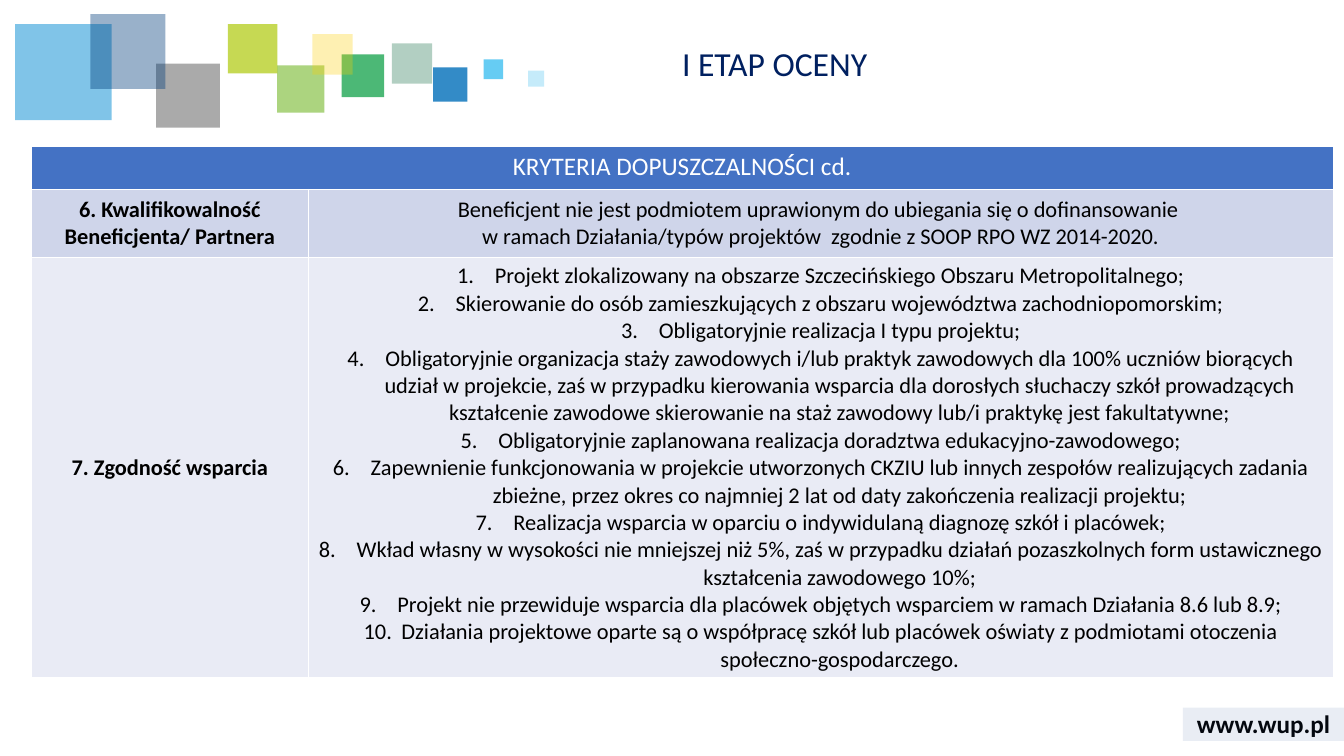
from dataclasses import dataclass

from lxml import etree
from pptx import Presentation
from pptx.dml.color import RGBColor
from pptx.enum.shapes import MSO_SHAPE
from pptx.enum.text import MSO_ANCHOR, MSO_AUTO_SIZE, PP_ALIGN
from pptx.oxml.ns import qn
from pptx.util import Pt

RECT = MSO_SHAPE.RECTANGLE
LEFT, MID = PP_ALIGN.LEFT, PP_ALIGN.CENTER
TOP, HALF = MSO_ANCHOR.TOP, MSO_ANCHOR.MIDDLE
FIXED = MSO_AUTO_SIZE.NONE
FACE = "Calibri"

HUES = {
    "sage": "006138", "blue": "006EB9", "green": "009A3C", "sky": "028BD3",
    "leaf": "75B82A", "gray": "575757", "navy": "003D7C", "cyan": "40C0F1",
    "lime": "AFCA0B", "gold": "FED000", "strip": "2F5597",
    "title": "002060", "black": "000000", "white": "FFFFFF",
    "head": "4472C4", "dark": "CFD5EA", "light": "E9EBF5",
}


@dataclass
class Box:
    hue: str
    alpha: int
    left: float
    top: float
    width: float
    height: float


@dataclass
class Entry:
    row: int
    col: int
    lines: list[str]
    fill: str
    ink: str = "black"
    size: int = 16
    bold: bool = False
    anchor: MSO_ANCHOR = HALF
    listed: bool = False


BOXES = [
    Box("sage", 30, 280, 31, 28.8, 28.8),
    Box("blue", 80, 309.5, 48.2, 24.5, 24.5),
    Box("green", 70, 244, 38.9, 30.5, 30.5),
    Box("sky", 50, 10.8, 17.3, 69, 68.5),
    Box("leaf", 60, 198, 46.8, 33.8, 33.8),
    Box("gray", 50, 111.5, 45.4, 45.6, 45.8),
    Box("navy", 40, 64.6, 10, 53.5, 53.5),
    Box("cyan", 80, 345.5, 42.4, 14, 14.2),
    Box("lime", 70, 162.8, 17.2, 35.3, 35.3),
    Box("gold", 30, 223.2, 24.5, 28.8, 28.8),
    Box("cyan", 30, 377.3, 50.4, 11.5, 11.5),
    Box("strip", 10, 845, 505.5, 115, 23.8),
]

RULES = [
    "Projekt zlokalizowany na obszarze Szczecińskiego Obszaru Metropolitalnego;",
    "Skierowanie do osób zamieszkujących z obszaru województwa zachodniopomorskim;",
    "Obligatoryjnie realizacja I typu projektu;",
    "Obligatoryjnie organizacja staży zawodowych i/lub praktyk zawodowych dla 100% "
    "uczniów biorących udział w projekcie, zaś w przypadku kierowania wsparcia dla "
    "dorosłych słuchaczy szkół prowadzących kształcenie zawodowe skierowanie na staż "
    "zawodowy lub/i praktykę jest fakultatywne;",
    "Obligatoryjnie zaplanowana realizacja doradztwa edukacyjno-zawodowego;",
    "Zapewnienie funkcjonowania w projekcie utworzonych CKZIU lub innych zespołów "
    "realizujących zadania zbieżne, przez okres co najmniej 2 lat od daty zakończenia "
    "realizacji projektu;",
    "Realizacja wsparcia w oparciu o indywidulaną diagnozę szkół i placówek;",
    "Wkład własny w wysokości nie mniejszej niż 5%, zaś w przypadku działań "
    "pozaszkolnych form ustawicznego kształcenia zawodowego 10%;",
    "Projekt nie przewiduje wsparcia dla placówek objętych wsparciem w ramach "
    "Działania 8.6 lub 8.9;",
    "Działania projektowe oparte są o współpracę szkół lub placówek oświaty z "
    "podmiotami otoczenia społeczno-gospodarczego.",
]

ENTRIES = [
    Entry(0, 0, ["KRYTERIA DOPUSZCZALNOŚCI cd."], "head", "white", 18, anchor=TOP),
    Entry(1, 0, ["6. Kwalifikowalność Beneficjenta/ Partnera"], "dark", bold=True),
    Entry(1, 1, ["Beneficjent nie jest podmiotem uprawionym do ubiegania się "
                 "o dofinansowanie \nw ramach Działania/typów projektów  zgodnie "
                 "z SOOP RPO WZ 2014-2020."], "dark"),
    Entry(2, 0, ["7. Zgodność wsparcia"], "light", bold=True),
    Entry(2, 1, RULES, "light", listed=True),
]


def tint(hue: str) -> RGBColor:
    return RGBColor.from_string(HUES[hue])


def apply(item, form: dict) -> None:
    for name, value in form.items():
        setattr(item, name, value)


def write(para, text: str, size: int, ink: str, bold: bool, align=MID) -> None:
    para.text = text
    para.alignment = align
    for run in para.runs:
        apply(run.font, {"name": FACE, "size": Pt(size), "bold": bold})
        run.font.color.rgb = tint(ink)


def draw_box(slide, box: Box) -> None:
    spot = [Pt(n) for n in (box.left, box.top, box.width, box.height)]
    shape = slide.shapes.add_shape(RECT, *spot)
    shape.shadow.inherit = False
    shape.line.fill.background()
    shape.fill.solid()
    shape.fill.fore_color.rgb = tint(box.hue)
    color = shape.fill._xPr.find(f".//{qn('a:srgbClr')}")
    etree.SubElement(color, qn("a:alpha"), val=str(box.alpha * 1000))


def edge(cell) -> None:
    props = cell._tc.get_or_add_tcPr()
    for side in ("lnL", "lnR", "lnT", "lnB"):
        line = etree.SubElement(props, qn(f"a:{side}"), w=str(Pt(1)))
        fill = etree.SubElement(line, qn("a:solidFill"))
        etree.SubElement(fill, qn("a:srgbClr"), val=HUES["white"])


def number(para) -> None:
    props = para._p.get_or_add_pPr()
    props.set("marL", str(Pt(27)))
    props.set("indent", str(-Pt(27)))
    etree.SubElement(props, qn("a:buFont"), typeface="+mj-lt")
    etree.SubElement(props, qn("a:buAutoNum"), type="arabicPeriod")


def fill_cell(cell, entry: Entry) -> None:
    cell.fill.solid()
    cell.fill.fore_color.rgb = tint(entry.fill)
    cell.vertical_anchor = entry.anchor
    frame = cell.text_frame
    for i, line in enumerate(entry.lines):
        para = frame.add_paragraph() if i else frame.paragraphs[0]
        if entry.listed:
            number(para)
        write(para, line, entry.size, entry.ink, entry.bold)


def draw_table(slide) -> None:
    cols, rows = (198, 732), (30.6, 48.6, 300)
    spot = [Pt(n) for n in (22.3, 104.8, sum(cols), sum(rows))]
    table = slide.shapes.add_table(len(rows), len(cols), *spot).table
    apply(table, {"first_row": False, "horz_banding": False})
    for col, width in zip(table.columns, cols):
        col.width = Pt(width)
    for row, height in zip(table.rows, rows):
        row.height = Pt(height)
    for cell in table.iter_cells():
        edge(cell)
    table.cell(0, 0).merge(table.cell(0, 1))
    for entry in ENTRIES:
        fill_cell(table.cell(entry.row, entry.col), entry)


def main() -> None:
    deck = Presentation()
    apply(deck, {"slide_width": Pt(960), "slide_height": Pt(540)})
    slide = deck.slides.add_slide(deck.slide_layouts[5])

    # Web address
    site = slide.shapes.add_textbox(Pt(845), Pt(502), Pt(115), Pt(29))
    apply(site.text_frame, {"word_wrap": True, "vertical_anchor": HALF})
    write(site.text_frame.paragraphs[0], "www.wup.pl", 18, "black", True)

    # Coloured squares and footer strip
    for box in BOXES:
        draw_box(slide, box)

    # Criteria
    draw_table(slide)

    # Title
    title = slide.shapes.title
    apply(title, {"left": Pt(480), "top": Pt(30.2),
                  "width": Pt(458), "height": Pt(39.6)})
    apply(title.text_frame, {"word_wrap": True, "auto_size": FIXED,
                             "vertical_anchor": TOP})
    para = title.text_frame.paragraphs[0]
    write(para, "I ETAP OCENY", 24, "title", False, LEFT)
    para.line_spacing = 0.9

    deck.save("out.pptx")


if __name__ == "__main__":
    main()
